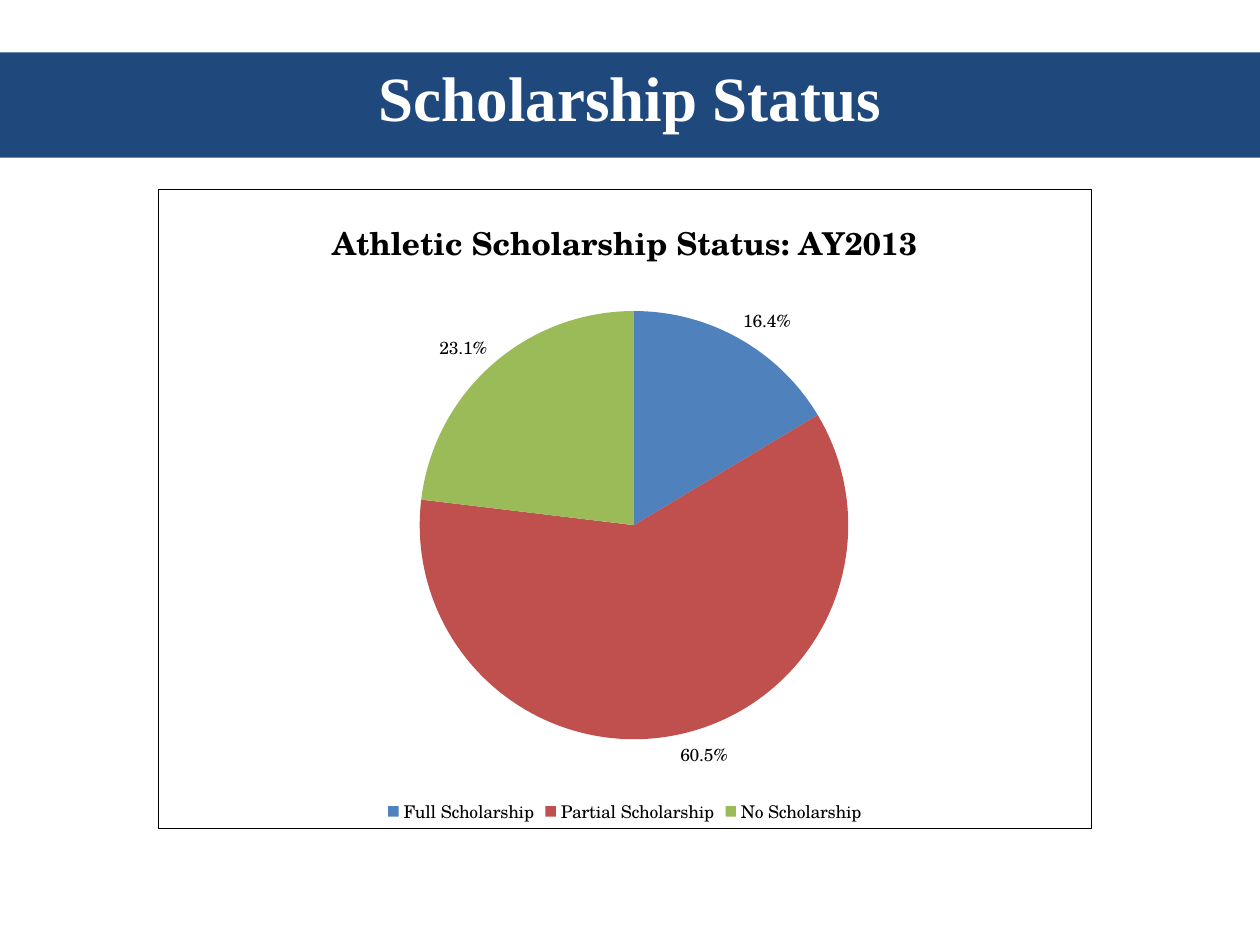
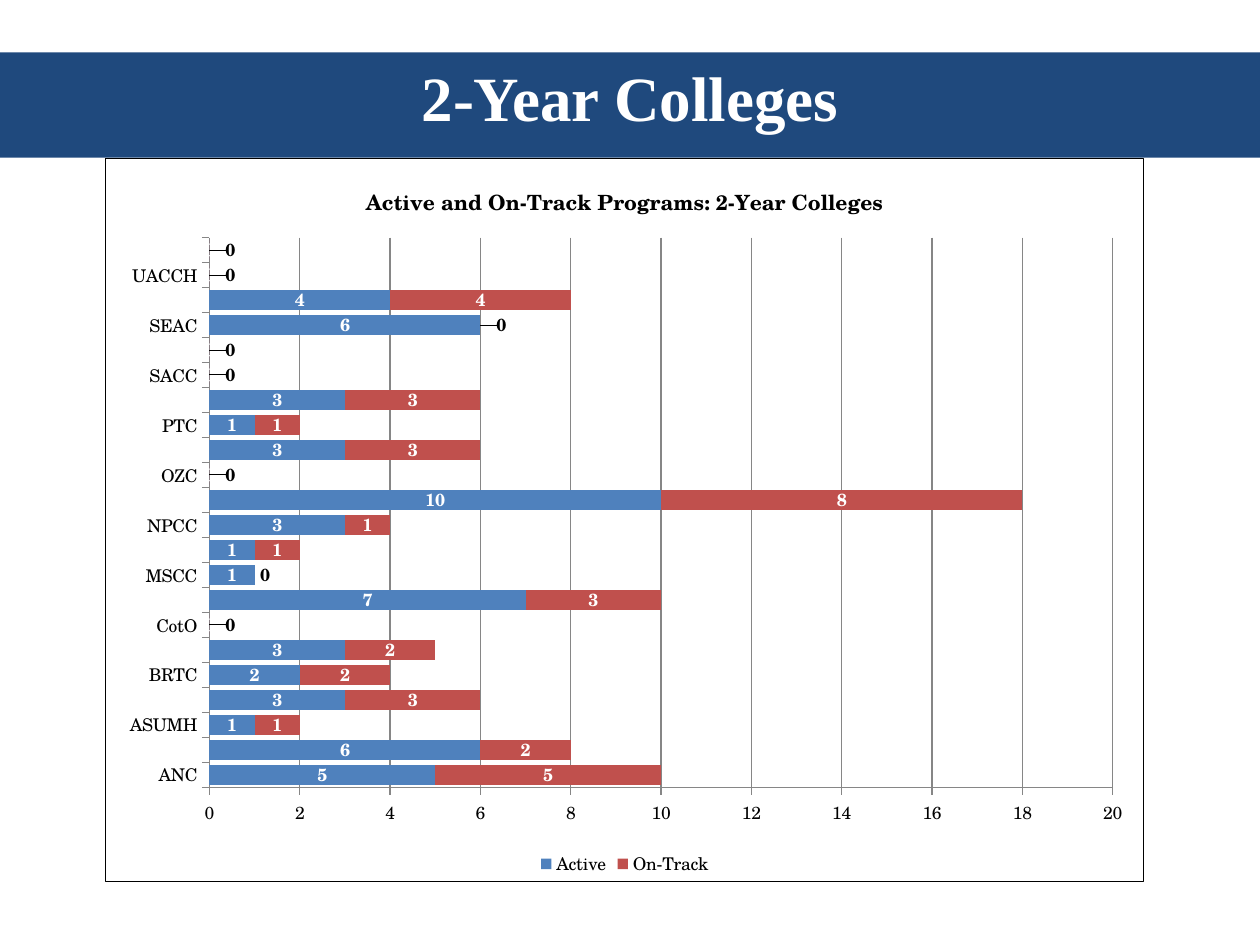
from dataclasses import dataclass

import lxml.etree
import pptx
import pptx.chart.chart
import pptx.chart.data
import pptx.dml.color
import pptx.enum.chart
import pptx.enum.text
import pptx.oxml
import pptx.oxml.ns
import pptx.slide
import pptx.util

Pt = pptx.util.Pt
qn = pptx.oxml.ns.qn
XL = pptx.enum.chart

COLORS = {
    "band": "1F497D",
    "white": "FFFFFF",
    "black": "000000",
    "axis": "868686",
    "blue": "4F81BD",
    "red": "C0504D",
    "green": "9BBB59",
}
TITLE_FONT = "Times New Roman"
CHART_FONT = "TeX Gyre Schola"


@dataclass(frozen=True)
class Box:
    left: float
    top: float
    width: float
    height: float


@dataclass(frozen=True)
class ChartFrame:
    heading: str
    heading_size: float
    box: Box
    plot_box: Box


@dataclass(frozen=True)
class ZeroLabel:
    series: str
    college: str
    shift: float


TITLE_BAND = Box(0, 30, 720, 51)

SCHOLARSHIP_FRAME = ChartFrame(
    "Athletic Scholarship Status: AY2013", 18,
    Box(90, 108, 534, 366), Box(0.28, 0.19, 0.46, 0.67),
)
COLLEGE_FRAME = ChartFrame(
    "Active and On-Track Programs: 2-Year Colleges", 12,
    Box(60, 90, 594, 414), Box(0.1, 0.11, 0.87, 0.76),
)

SCHOLARSHIP_SHARES = {
    "Full Scholarship": (16.4, "blue"),
    "Partial Scholarship": (60.5, "red"),
    "No Scholarship": (23.1, "green"),
}

COLLEGE_PROGRAMS = {
    "ANC": (5, 5),
    "ASUB": (6, 2),
    "ASUMH": (1, 1),
    "ASUN": (3, 3),
    "BRTC": (2, 2),
    "CCCUA": (3, 2),
    "CotO": (0, 0),
    "EACC": (7, 3),
    "MSCC": (1, 0),
    "NAC": (1, 1),
    "NPCC": (3, 1),
    "NWACC": (10, 8),
    "OZC": (0, 0),
    "PCCUA": (3, 3),
    "PTC": (1, 1),
    "RMCC": (3, 3),
    "SACC": (0, 0),
    "SAUT": (0, 0),
    "SEAC": (6, 0),
    "UACCB": (4, 4),
    "UACCH": (0, 0),
    "UACCM": (0, 0),
}
PROGRAM_COLORS = {"Active": "blue", "On-Track": "red"}

ZERO_LABELS = [
    ZeroLabel("Active", "OZC", 0.02),
    ZeroLabel("Active", "SACC", 0.02),
    ZeroLabel("Active", "SAUT", 0.02),
    ZeroLabel("Active", "UACCM", 0.02),
    ZeroLabel("On-Track", "CotO", 0.02),
    ZeroLabel("On-Track", "MSCC", 0.01),
    ZeroLabel("On-Track", "SEAC", 0.02),
    ZeroLabel("On-Track", "UACCH", 0.02),
]


def color(name: str) -> pptx.dml.color.RGBColor:
    return pptx.dml.color.RGBColor.from_string(COLORS[name])


def manual_layout(**settings: object) -> lxml.etree._Element:
    layout = pptx.oxml.parse_xml(
        f'<c:layout {pptx.oxml.ns.nsdecls("c")}><c:manualLayout/></c:layout>'
    )
    for tag, value in settings.items():
        lxml.etree.SubElement(layout[0], qn(f"c:{tag}")).set("val", str(value))
    return layout


def add_titled_slide(deck, title: str) -> pptx.slide.Slide:
    slide = deck.slides.add_slide(deck.slide_layouts.get_by_name("Title Only"))
    band = slide.shapes.title
    band.left, band.top = Pt(TITLE_BAND.left), Pt(TITLE_BAND.top)
    band.width, band.height = Pt(TITLE_BAND.width), Pt(TITLE_BAND.height)
    band.fill.solid()
    band.fill.fore_color.rgb = color("band")
    frame = band.text_frame
    frame.word_wrap = True
    frame.auto_size = pptx.enum.text.MSO_AUTO_SIZE.SHAPE_TO_FIT_TEXT
    frame.vertical_anchor = pptx.enum.text.MSO_ANCHOR.TOP
    paragraph = frame.paragraphs[0]
    paragraph.alignment = pptx.enum.text.PP_ALIGN.CENTER
    run = paragraph.add_run()
    run.text = title
    run.font.name, run.font.size, run.font.bold = TITLE_FONT, Pt(36), True
    run.font.color.rgb = color("white")
    return slide


def add_border(chart: pptx.chart.chart.Chart) -> None:
    space = chart._chartSpace
    if space.find(qn("c:roundedCorners")) is None:
        corners = lxml.etree.Element(qn("c:roundedCorners"))
        corners.set("val", "0")
        space.insert(0, corners)
    space.find(qn("c:chart")).addnext(pptx.oxml.parse_xml(
        f'<c:spPr {pptx.oxml.ns.nsdecls("c", "a")}><a:ln w="{Pt(0.75)}">'
        f'<a:solidFill><a:srgbClr val="{COLORS["black"]}"/></a:solidFill>'
        '</a:ln></c:spPr>'
    ))


def place_plot(chart: pptx.chart.chart.Chart, plot_box: Box) -> None:
    plot_area = chart._chartSpace.find(f'{qn("c:chart")}/{qn("c:plotArea")}')
    for automatic in plot_area.findall(qn("c:layout")):
        plot_area.remove(automatic)
    plot_area.insert(0, manual_layout(
        layoutTarget="inner", xMode="edge", yMode="edge",
        x=plot_box.left, y=plot_box.top, w=plot_box.width, h=plot_box.height,
    ))


def add_framed_chart(
    slide: pptx.slide.Slide, kind: XL.XL_CHART_TYPE,
    data: pptx.chart.data.CategoryChartData, frame: ChartFrame,
) -> pptx.chart.chart.Chart:
    box = frame.box
    chart = slide.shapes.add_chart(
        kind, Pt(box.left), Pt(box.top), Pt(box.width), Pt(box.height), data
    ).chart
    chart.font.name, chart.font.size = CHART_FONT, Pt(10)
    chart.font.color.rgb = color("black")
    chart.has_title = True
    heading = chart.chart_title.text_frame.paragraphs[0].add_run()
    heading.text = frame.heading
    heading.font.name, heading.font.size = CHART_FONT, Pt(frame.heading_size)
    heading.font.bold = True
    heading.font.color.rgb = color("black")
    chart.has_legend = True
    chart.legend.position = XL.XL_LEGEND_POSITION.BOTTOM
    chart.legend.include_in_layout = False
    place_plot(chart, frame.plot_box)
    add_border(chart)
    return chart


def build_scholarship_slide(deck) -> None:
    slide = add_titled_slide(deck, "Scholarship Status")
    data = pptx.chart.data.CategoryChartData()
    data.categories = list(SCHOLARSHIP_SHARES)
    data.add_series("Series 1", [share for share, _ in SCHOLARSHIP_SHARES.values()])
    chart = add_framed_chart(slide, XL.XL_CHART_TYPE.PIE, data, SCHOLARSHIP_FRAME)
    plot = chart.plots[0]
    plot.vary_by_categories = True
    shares = plot.series[0]
    for index, (_, slice_color) in enumerate(SCHOLARSHIP_SHARES.values()):
        fill = shares.points[index].format.fill
        fill.solid()
        fill.fore_color.rgb = color(slice_color)
    labels = shares.data_labels
    labels.show_value, labels.show_percentage = False, True
    labels.number_format, labels.number_format_is_linked = "0.0%", False
    labels.position = XL.XL_LABEL_POSITION.OUTSIDE_END


def format_axes(chart: pptx.chart.chart.Chart) -> None:
    counts = chart.value_axis
    counts.minimum_scale, counts.maximum_scale, counts.major_unit = 0, 20, 2
    counts.has_major_gridlines = True
    counts.major_gridlines.format.line.color.rgb = color("axis")
    for axis in (counts, chart.category_axis):
        axis.major_tick_mark = XL.XL_TICK_MARK.OUTSIDE
        axis.minor_tick_mark = XL.XL_TICK_MARK.NONE
        axis.format.line.color.rgb = color("axis")


def build_college_slide(deck) -> None:
    slide = add_titled_slide(deck, "2-Year Colleges")
    colleges = list(COLLEGE_PROGRAMS)
    data = pptx.chart.data.CategoryChartData(number_format="General")
    data.categories = colleges
    for status, counts in zip(PROGRAM_COLORS, zip(*COLLEGE_PROGRAMS.values())):
        data.add_series(status, counts)
    chart = add_framed_chart(slide, XL.XL_CHART_TYPE.BAR_STACKED, data, COLLEGE_FRAME)
    format_axes(chart)
    plot = chart.plots[0]
    plot.gap_width, plot.overlap, plot.vary_by_categories = 25, 100, False
    programs = {series.name: series for series in plot.series}
    for status, series in programs.items():
        series.format.fill.solid()
        series.format.fill.fore_color.rgb = color(PROGRAM_COLORS[status])
        labels = series.data_labels
        labels.show_value = True
        labels.position = XL.XL_LABEL_POSITION.CENTER
        labels.font.bold = True
        labels.font.size = Pt(10)
        labels.font.color.rgb = color("white")
    for zero in ZERO_LABELS:
        label = programs[zero.series].points[colleges.index(zero.college)].data_label
        label.font.bold = True
        label.font.size = Pt(10)
        label.font.color.rgb = color("black")
        label.position = XL.XL_LABEL_POSITION.CENTER
        label._get_or_add_dLbl().insert(1, manual_layout(x=zero.shift, y=0))


def main() -> None:
    deck = pptx.Presentation()
    deck.slide_width, deck.slide_height = Pt(720), Pt(540)
    build_scholarship_slide(deck)
    build_college_slide(deck)
    deck.save("out.pptx")


if __name__ == "__main__":
    main()
